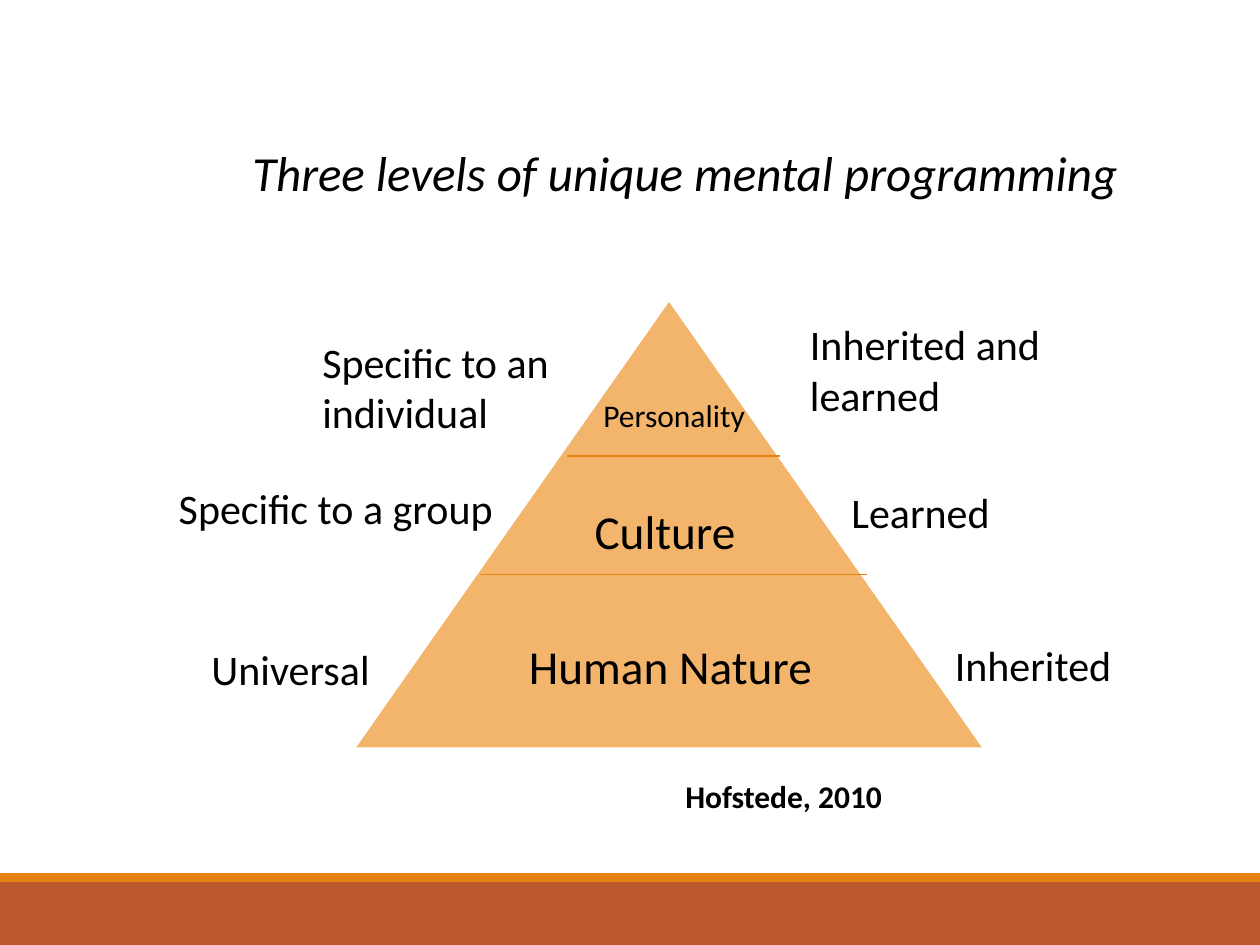
from dataclasses import dataclass
from lxml.etree import SubElement
from pptx import Presentation
from pptx.dml.color import RGBColor
from pptx.enum.shapes import MSO_CONNECTOR, MSO_SHAPE
from pptx.enum.text import PP_ALIGN
from pptx.oxml.ns import qn
from pptx.util import Inches, Pt

COLS, ROWS = 100, 75
WIDTH, HEIGHT = Inches(10), Inches(7.5)
WHITE = RGBColor(0xFF, 0xFF, 0xFF)
BLACK = RGBColor(0x00, 0x00, 0x00)
RUST = RGBColor(0xBD, 0x58, 0x2C)
ORANGE = RGBColor(0xE4, 0x83, 0x12)
PEACH = RGBColor(0xF3, 0xB5, 0x6C)


@dataclass(frozen=True)
class Box:
    """A rectangle in grid columns and rows."""
    col: float
    row: float
    cols: float
    rows: float

    def emu(self) -> tuple[int, int, int, int]:
        """Return left, top, width and height as lengths."""
        return x(self.col), y(self.row), x(self.cols), y(self.rows)


@dataclass(frozen=True)
class Label:
    """A text with its box and size."""
    text: str
    box: Box
    size: float = 24


@dataclass(frozen=True)
class Divider:
    """A level line across the pyramid."""
    start: float
    end: float
    row: float


LEVELS = (
    Label("Personality", Box(46.9, 30.9, 17.5, 4), 18),
    Label("Culture", Box(46.2, 39.4, 16.1, 5.6), 27),
    Label("Human Nature", Box(41, 50.1, 25, 5.6), 27),
)
SCOPES = (
    Label("Specific to an individual", Box(24.6, 26.2, 21.6, 9.1)),
    Label("Specific to a group", Box(13.2, 37.8, 26.9, 5)),
    Label("Universal", Box(15.8, 50.6, 15.8, 5)),
)
ORIGINS = (
    Label("Inherited and learned", Box(63.3, 24.8, 20.4, 9.1)),
    Label("Learned", Box(66.6, 38.1, 15, 5)),
    Label("Inherited", Box(74.8, 50.3, 14.5, 5)),
)
DIVIDERS = (Divider(45, 61.9, 36.2), Divider(38.1, 68.8, 45.6))


def x(cols: float) -> int:
    """Convert columns to a length."""
    return round(WIDTH * cols / COLS)


def y(rows: float) -> int:
    """Convert rows to a length."""
    return round(HEIGHT * rows / ROWS)


def add_text(s, text: str, box: Box, *, size: float = 24, bold: bool = False,
             italic: bool = False, align: PP_ALIGN = PP_ALIGN.LEFT) -> None:
    """Add a wrapped text box."""
    tf = s.shapes.add_textbox(*box.emu()).text_frame
    tf.word_wrap = True
    p = tf.paragraphs[0]
    p.alignment = align
    r = p.add_run()
    r.text = text
    r.font.name, r.font.size = "Calibri", Pt(size)
    r.font.bold, r.font.italic = bold, italic
    r.font.color.rgb = BLACK


def add_filled(s, kind: MSO_SHAPE, box: Box, fill: RGBColor,
               line: RGBColor | None = None) -> None:
    """Add a filled shape with an optional outline."""
    sp = s.shapes.add_shape(kind, *box.emu())
    sp.shadow.inherit = False
    sp.fill.solid()
    sp.fill.fore_color.rgb = fill
    if line is None:
        sp.line.fill.background()
    else:
        sp.line.color.rgb, sp.line.width = line, Pt(1.25)


def add_divider(s, d: Divider) -> None:
    """Add a horizontal line between two levels."""
    c = s.shapes.add_connector(MSO_CONNECTOR.STRAIGHT, x(d.start), y(d.row),
                               x(d.end), y(d.row))
    c.line.color.rgb, c.line.width = ORANGE, Pt(1)
    SubElement(c._element.spPr, qn("a:effectLst"))


def main() -> None:
    """Build and save the slide."""
    prs = Presentation()
    prs.slide_width, prs.slide_height = WIDTH, HEIGHT
    s = prs.slides.add_slide(prs.slide_layouts[6])
    add_filled(s, MSO_SHAPE.RECTANGLE, Box(0, 70, COLS, 5), RUST)
    add_filled(s, MSO_SHAPE.RECTANGLE, Box(0, 69.3, COLS, 0.7), ORANGE)
    add_filled(s, MSO_SHAPE.ISOSCELES_TRIANGLE, Box(28.1, 23.8, 50, 35.6), PEACH, WHITE)
    for d in DIVIDERS:
        add_divider(s, d)
    for label in LEVELS + SCOPES + ORIGINS:
        add_text(s, label.text, label.box, size=label.size)
    add_text(s, "Three levels of unique mental programming", Box(18.5, 10.8, 71.7, 5.7),
             size=28, italic=True, align=PP_ALIGN.CENTER)
    add_text(s, "Hofstede, 2010", Box(53.4, 61.2, 21.9, 4), size=18, bold=True)
    prs.save("out.pptx")


if __name__ == "__main__":
    main()
